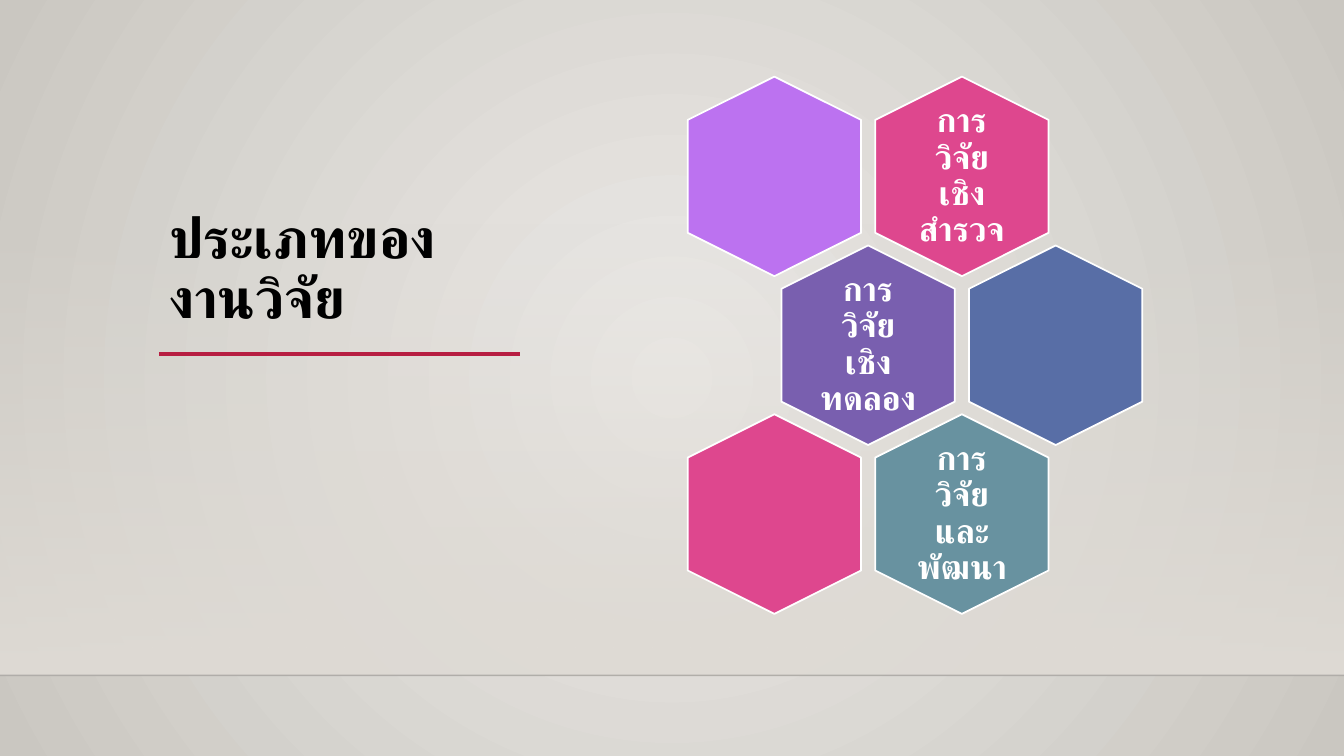
from dataclasses import dataclass

from lxml.etree import SubElement
from pptx import Presentation
from pptx.dml.color import RGBColor
from pptx.dml.fill import FillFormat
from pptx.enum.lang import MSO_LANGUAGE_ID
from pptx.enum.shapes import MSO_CONNECTOR, MSO_SHAPE
from pptx.enum.text import MSO_ANCHOR, PP_ALIGN
from pptx.oxml.ns import qn
from pptx.shapes.connector import Connector
from pptx.shapes.shapetree import GroupShapes, SlideShapes
from pptx.slide import Slide
from pptx.text.text import TextFrame
from pptx.util import Inches, Pt

FONT = "Roboto"
SLIDE_WIDTH, SLIDE_HEIGHT = 13.33, 7.5
FLOOR_Y = 6.7

HEX_LENGTH, HEX_BREADTH = 1.98, 1.72
HEX_LEFT, HEX_TOP = 6.69, 0.89
COLUMN_STEP, ROW_STEP = 1.86, 1.675
LABEL_WIDTH, LABEL_HEIGHT = 1.18, 1.36


@dataclass(frozen=True)
class Cell:
    row: int
    column: int
    color: str
    label: str = ""


CELLS = [
    Cell(0, 1, "DE478E", "การวิจัยเชิงสำรวจ"),
    Cell(0, 0, "BC72F0"),
    Cell(1, 0, "795FAF", "การวิจัยเชิงทดลอง"),
    Cell(1, 1, "586EA6"),
    Cell(2, 1, "6892A0", "การวิจัยและพัฒนา"),
    Cell(2, 0, "DE478E"),
]


def rgb(color: str) -> RGBColor:
    return RGBColor.from_string(color)


def set_gradient(fill: FillFormat, start: str, end: str) -> None:
    fill.gradient()
    for stop, color, position in zip(fill.gradient_stops, (start, end), (0, 1)):
        stop.color.rgb = rgb(color)
        stop.position = position


def set_opacity(element, percent: int) -> None:
    """Apply opacity to the first colour found inside the element."""
    color = element.find(".//" + qn("a:srgbClr"))
    SubElement(color, qn("a:alpha"), val=str(percent * 1000))


def paint_background(slide: Slide) -> None:
    set_gradient(slide.background.fill, "ECEAE7", "CAC7C1")
    gradient = slide.element.find(".//" + qn("a:gradFill"))
    gradient.remove(gradient.find(qn("a:lin")))
    circle = SubElement(gradient, qn("a:path"), {"path": "circle"})
    center = dict.fromkeys(("l", "t", "r", "b"), "50000")
    SubElement(circle, qn("a:fillToRect"), center)


def add_wall(shapes: SlideShapes) -> None:
    top = 2.21
    wall = shapes.add_shape(MSO_SHAPE.RECTANGLE, 0, Inches(top),
                            Inches(SLIDE_WIDTH), Inches(FLOOR_Y - top))
    wall.shadow.inherit = False
    wall.line.fill.background()
    set_gradient(wall.fill, "DFDBD5", "DFDBD5")
    wall.fill.gradient_angle = 270
    set_opacity(wall.element.spPr, 0)


def add_rule(shapes: SlideShapes, left: float, right: float, y: float,
             color: str, width: float) -> Connector:
    rule = shapes.add_connector(MSO_CONNECTOR.STRAIGHT, Inches(left), Inches(y),
                                Inches(right), Inches(y))
    rule.line.color.rgb = rgb(color)
    rule.line.width = Pt(width)
    SubElement(rule.element.spPr, qn("a:effectLst"))
    return rule


def write_text(frame: TextFrame, text: str, size: float, color: str,
               align: PP_ALIGN, anchor: MSO_ANCHOR) -> None:
    frame.word_wrap = True
    frame.vertical_anchor = anchor
    paragraph = frame.paragraphs[0]
    paragraph.alignment = align
    paragraph.line_spacing = 0.9
    run = paragraph.add_run()
    run.text = text
    run.font.name = FONT
    run.font.size = Pt(size)
    run.font.bold = True
    run.font.color.rgb = rgb(color)
    run.font.language_id = MSO_LANGUAGE_ID.THAI
    SubElement(run.font._element, qn("a:cs"), typeface=FONT)


def add_cell(shapes: GroupShapes, cell: Cell) -> None:
    left = HEX_LEFT + COLUMN_STEP * (cell.column + cell.row % 2 / 2)
    top = HEX_TOP + ROW_STEP * cell.row
    hexagon = shapes.add_shape(MSO_SHAPE.HEXAGON, Inches(left), Inches(top),
                               Inches(HEX_LENGTH), Inches(HEX_BREADTH))
    hexagon.rotation = 90
    hexagon.adjustments[0] = 0.25
    hexagon.shadow.inherit = False
    hexagon.fill.solid()
    hexagon.fill.fore_color.rgb = rgb(cell.color)
    hexagon.line.color.rgb = rgb("FFFFFF")
    hexagon.line.width = Pt(1.25)
    if not cell.label:
        return
    label = shapes.add_textbox(Inches(left + (HEX_LENGTH - LABEL_WIDTH) / 2),
                               Inches(top + (HEX_BREADTH - LABEL_HEIGHT) / 2),
                               Inches(LABEL_WIDTH), Inches(LABEL_HEIGHT))
    frame = label.text_frame
    frame.margin_top = frame.margin_bottom = Inches(0.1)
    write_text(frame, cell.label, 24, "FFFFFF", PP_ALIGN.CENTER, MSO_ANCHOR.MIDDLE)


def main() -> None:
    presentation = Presentation()
    presentation.slide_width = Inches(SLIDE_WIDTH)
    presentation.slide_height = Inches(SLIDE_HEIGHT)
    slide = presentation.slides.add_slide(presentation.slide_layouts[6])
    shapes = slide.shapes

    paint_background(slide)
    add_wall(shapes)
    floor_edge = add_rule(shapes, 0, SLIDE_WIDTH, FLOOR_Y, "000001", 1)
    set_opacity(floor_edge.element.spPr, 20)
    add_rule(shapes, 1.58, 5.16, 3.51, "B71E42", 2.5)

    title = shapes.add_textbox(Inches(1.58), Inches(0.87), Inches(3.58), Inches(2.46))
    write_text(title.text_frame, "ประเภทของงานวิจัย", 40, "000000",
               PP_ALIGN.LEFT, MSO_ANCHOR.BOTTOM)

    honeycomb = shapes.add_group_shape()
    for cell in CELLS:
        add_cell(honeycomb.shapes, cell)

    presentation.save("out.pptx")


if __name__ == "__main__":
    main()
